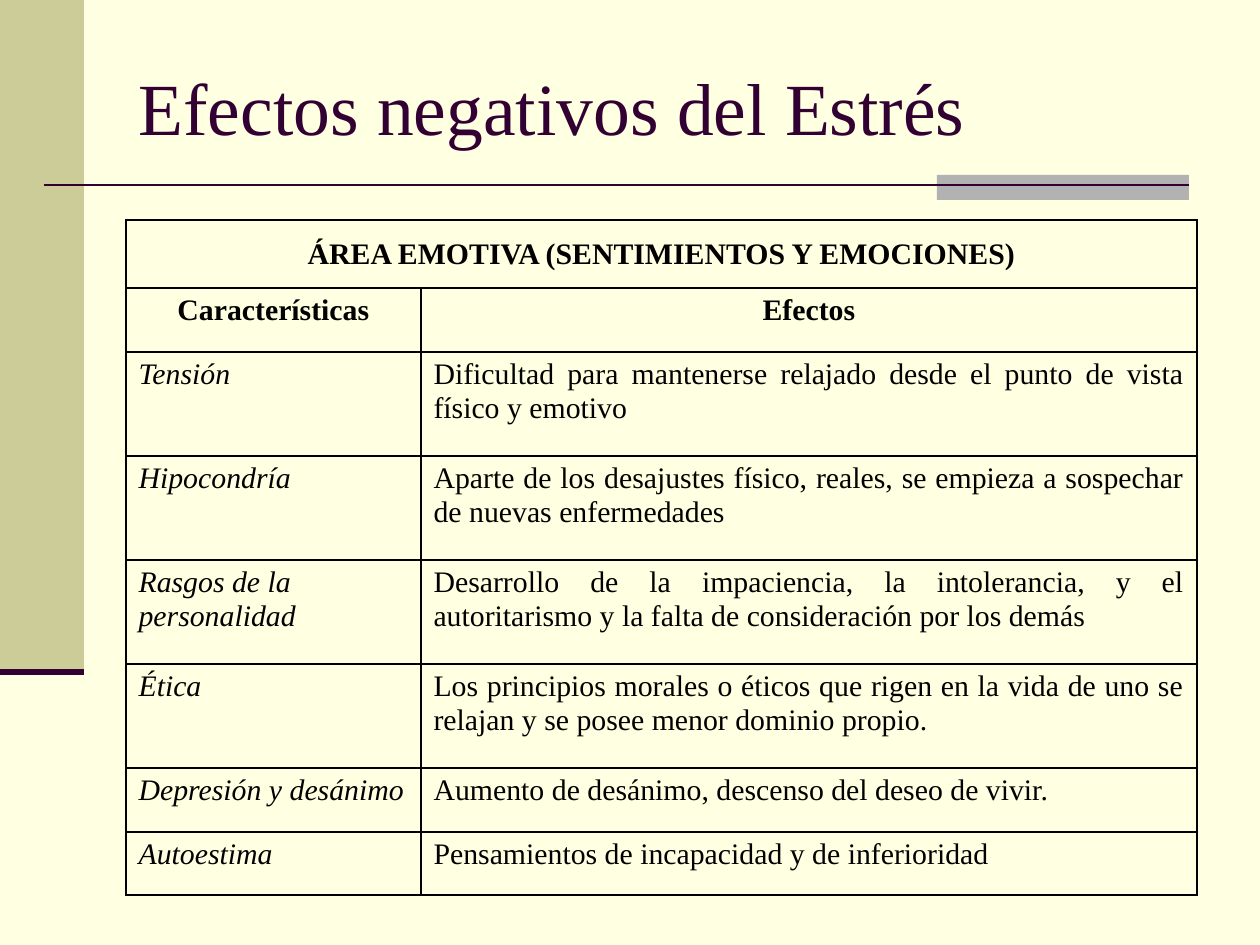
from lxml import etree
from pptx import Presentation, util as u
from pptx.dml.color import RGBColor
from pptx.enum import shapes, text
from pptx.oxml.ns import qn

PX = 914400 / 126
FONT = "Times New Roman"
CREAM, KHAKI, GREY, PLUM, BLACK = "FFFFE1", "CCCC99", "B2B2B2", "330033", "000000"

HEADING = "ÁREA EMOTIVA (SENTIMIENTOS Y EMOCIONES)"
COLUMN_NAMES = ("Características", "Efectos")
EFFECTS = [
    ("Tensión",
     "Dificultad para mantenerse relajado desde el punto de vista físico y emotivo"),
    ("Hipocondría",
     "Aparte de los desajustes físico, reales, se empieza a sospechar de nuevas enfermedades"),
    ("Rasgos de la personalidad",
     "Desarrollo de la impaciencia, la intolerancia, y el autoritarismo "
     "y la falta de consideración por los demás"),
    ("Ética",
     "Los principios morales o éticos que rigen en la vida de uno se relajan "
     "y se posee menor dominio propio."),
    ("Depresión y desánimo", "Aumento de desánimo, descenso del deseo de vivir."),
    ("Autoestima", "Pensamientos de incapacidad y de inferioridad"),
]
COLUMN_WIDTHS = (295, 776)
ROW_HEIGHTS = (68, 64, 104, 104, 104, 104, 64, 63)


def px(*lengths):
    return [u.Emu(round(length * PX)) for length in lengths]


def color(value):
    return RGBColor.from_string(value)


def style_font(paragraph, size, value, bold=False, italic=False):
    font = paragraph.font
    font.name, font.size, font.bold, font.italic = FONT, u.Pt(size), bold, italic
    font.color.rgb = color(value)


def add_block(slide, box, fill):
    block = slide.shapes.add_shape(shapes.MSO_SHAPE.RECTANGLE, *px(*box))
    block.shadow.inherit = False
    block.fill.solid()
    block.fill.fore_color.rgb = color(fill)
    block.line.fill.background()


def add_rule(slide, left, top, width, weight):
    rule = slide.shapes.add_connector(
        shapes.MSO_CONNECTOR.STRAIGHT, *px(left, top, left + width, top))
    rule.line.color.rgb = color(PLUM)
    rule.line.width = u.Pt(weight)
    etree.SubElement(rule._element.spPr, qn("a:effectLst"))


def add_side_band(slide, left, top, width, height):
    add_block(slide, (left, top, width, height), KHAKI)
    add_rule(slide, left, top + height, width, 3.5)


def add_title_rule(slide, left, top, width, height):
    accent = 252
    add_block(slide, (left + width - accent, top, accent, height), GREY)
    add_rule(slide, left, top + 10, width, 1.5)


def place_title(slide, box, wording):
    title = slide.shapes.title
    title.left, title.top, title.width, title.height = px(*box)
    frame = title.text_frame
    frame.text = wording
    frame.auto_size = text.MSO_AUTO_SIZE.NONE
    frame.vertical_anchor = text.MSO_ANCHOR.MIDDLE
    frame.paragraphs[0].alignment = text.PP_ALIGN.LEFT
    style_font(frame.paragraphs[0], 42, PLUM)


def outline_cell(cell):
    properties = cell._tc.get_or_add_tcPr()
    for side in ("lnL", "lnR", "lnT", "lnB"):
        border = etree.SubElement(properties, qn(f"a:{side}"), w=str(u.Pt(1)))
        fill = etree.SubElement(border, qn("a:solidFill"))
        etree.SubElement(fill, qn("a:srgbClr"), val=BLACK)
    cell.fill.background()


def fill_cell(cell, wording, alignment, bold=False, italic=False):
    cell.text = wording
    paragraph = cell.text_frame.paragraphs[0]
    paragraph.alignment = alignment
    style_font(paragraph, 17, BLACK, bold, italic)


def add_effects_table(slide, left, top):
    box = px(left, top, sum(COLUMN_WIDTHS), sum(ROW_HEIGHTS))
    table = slide.shapes.add_table(len(ROW_HEIGHTS), len(COLUMN_WIDTHS), *box).table
    table.first_row = table.horz_banding = False
    for column, width in zip(table.columns, px(*COLUMN_WIDTHS)):
        column.width = width
    for row, height in zip(table.rows, px(*ROW_HEIGHTS)):
        row.height = height
    for cell in table.iter_cells():
        outline_cell(cell)

    align = text.PP_ALIGN
    heading = table.cell(0, 0)
    heading.merge(table.cell(0, 1))
    heading.vertical_anchor = text.MSO_ANCHOR.MIDDLE
    fill_cell(heading, HEADING, align.CENTER, bold=True)
    for column, name in enumerate(COLUMN_NAMES):
        fill_cell(table.cell(1, column), name, align.CENTER, bold=True)
    for row, (trait, effect) in enumerate(EFFECTS, start=2):
        fill_cell(table.cell(row, 0), trait, align.LEFT, italic=True)
        fill_cell(table.cell(row, 1), effect, align.JUSTIFY)


def main():
    deck = Presentation()
    deck.slide_width, deck.slide_height = px(1260, 945)
    slide = deck.slides.add_slide(deck.slide_layouts.get_by_name("Title Only"))
    slide.background.fill.solid()
    slide.background.fill.fore_color.rgb = color(CREAM)
    add_side_band(slide, 0, 0, 84, 672)
    add_title_rule(slide, 44, 175, 1145, 25)
    place_title(slide, (126, 38, 1071, 136), "Efectos negativos del Estrés")
    add_effects_table(slide, 126, 220)
    deck.save("out.pptx")


if __name__ == "__main__":
    main()
